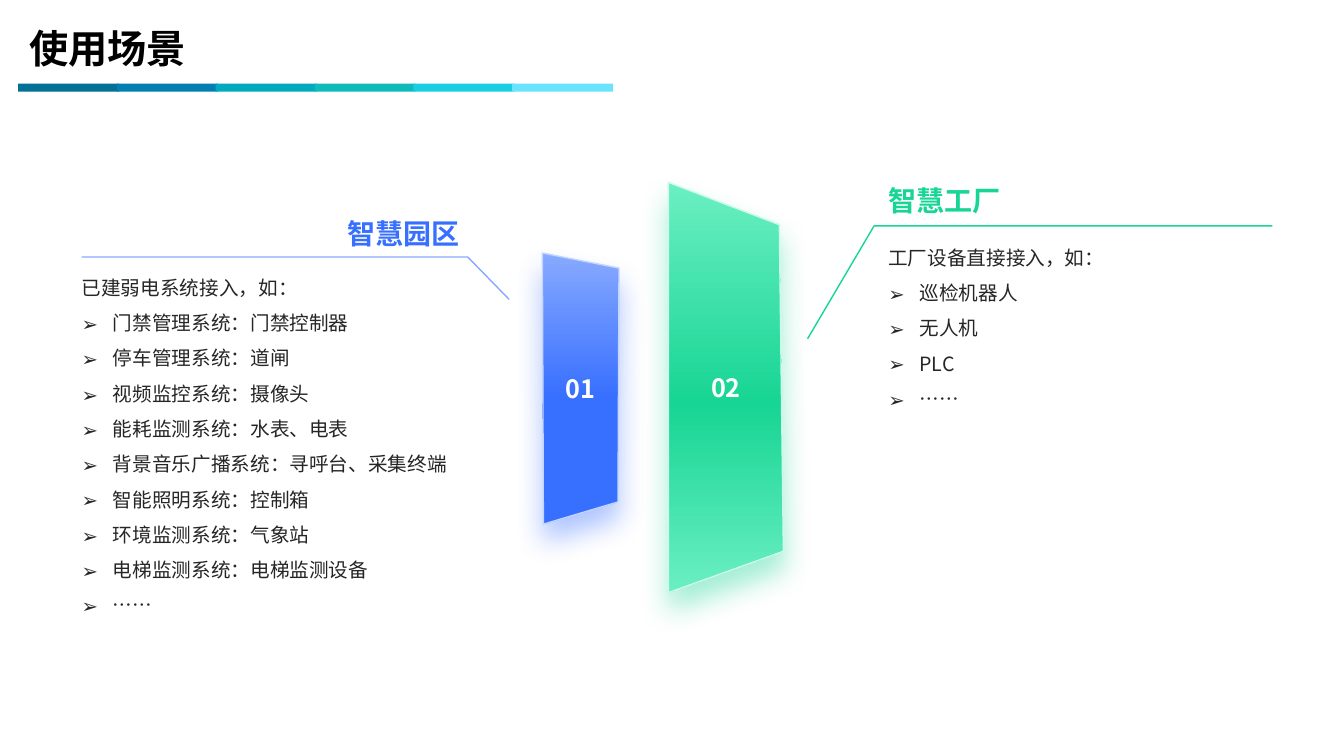
from lxml.etree import SubElement
from pptx import Presentation
from pptx.dml.color import RGBColor
from pptx.enum.shapes import MSO_SHAPE
from pptx.enum.text import MSO_ANCHOR as Anchor, PP_ALIGN as Align
from pptx.oxml.ns import qn
from pptx.util import Inches, Pt

THEME = {
    "font": "Noto Sans CJK SC", "title_font": "Open Sans",
    "title": 28, "heading": 20, "number": 18, "body": 14,
    "black": "000000", "ink": "262626", "white": "FFFFFF",
    "blue": "376FFF", "light_blue": "87A9FF", "pale_blue": "C3D4FF",
    "green": "17D594", "light_green": "6BEFC2", "pale_green": "CEFAEB",
    "bars": ["007094", "017FB3", "00A9BE", "0FBABA", "19CEE0", "6AE3FE"],
}


def grid(*cells):
    """Turn columns and rows of a 0.1 inch grid into lengths."""
    return [Inches(cell / 10) for cell in cells]


def write(shape, lines, size, color, bold=False, align=Align.LEFT, anchor=Anchor.TOP,
          font=THEME["font"], spacing=1.0, inset=0, wrap=True):
    """Fill a shape with text; every line after the first is a bullet."""
    frame = shape.text_frame
    frame_format = {"word_wrap": wrap, "vertical_anchor": anchor}
    frame_format |= {f"margin_{side}": Inches(inset) for side in ("left", "right")}
    frame_format |= {f"margin_{side}": Inches(inset / 2) for side in ("top", "bottom")}
    for name, value in frame_format.items():
        setattr(frame, name, value)
    for index, line in enumerate(lines):
        paragraph = frame.add_paragraph() if index else frame.paragraphs[0]
        paragraph.alignment = align
        paragraph.line_spacing = spacing
        run = paragraph.add_run()
        run.text = line
        for name, value in {"name": font, "size": Pt(size), "bold": bold}.items():
            setattr(run.font, name, value)
        run.font.color.rgb = RGBColor.from_string(color)
        SubElement(run.font._element, qn("a:ea"), typeface=THEME["font"])
        if index:
            properties = paragraph._p.get_or_add_pPr()
            properties.set("marL", str(Inches(0.31)))
            properties.set("indent", str(-Inches(0.31)))
            SubElement(properties, qn("a:buFont"), typeface=THEME["font"])
            SubElement(properties, qn("a:buChar"), char="➢")


presentation = Presentation()
presentation.slide_width, presentation.slide_height = Inches(13.33), Inches(7.5)
slide = presentation.slides.add_slide(presentation.slide_layouts[6])
shapes = slide.shapes

# Title and its six-colour rule
write(shapes.add_textbox(*grid(1.9, 1.9, 55, 5.7)), ["使用场景"], THEME["title"], THEME["black"],
      bold=True, anchor=Anchor.MIDDLE, font=THEME["title_font"], inset=0.1)
for index, color in enumerate(THEME["bars"]):
    bar = shapes.add_shape(MSO_SHAPE.RECTANGLE, *grid(1.8 + 9.8 * index, 8.3, 10, 0.8))
    bar.shadow.inherit = False
    bar.fill.solid()
    bar.fill.fore_color.rgb = RGBColor.from_string(color)
    bar.line.fill.background()

# Numbered panels and the callout lines that lead to them
blue, light_blue = THEME["blue"], THEME["light_blue"]
green, light_green = THEME["green"], THEME["light_green"]
outlines = [
    {"points": [(53.8, 25.1), (61.4, 26.6), (61.3, 49.8), (53.9, 52)], "number": "01",
     "line": THEME["pale_blue"], "glow": blue,
     "stops": [(0, light_blue), (54, blue), (100, blue)]},
    {"points": [(66.3, 18.1), (77.3, 22.3), (77.7, 54.7), (66.3, 58.8)], "number": "02",
     "line": THEME["pale_green"], "glow": green,
     "stops": [(0, light_green), (54, green), (100, light_green)]},
    {"points": [(8.1, 25.5), (46.4, 25.5), (50.5, 29.7)], "line": light_blue},
    {"points": [(80.1, 33.6), (86.7, 22.4), (126.2, 22.4)], "line": green},
]
for outline in outlines:
    is_panel = "number" in outline
    start, *corners = [grid(*point) for point in outline["points"]]
    builder = shapes.build_freeform(*start)
    builder.add_line_segments(corners, close=is_panel)
    shape = builder.convert_to_shape()
    shape.line.color.rgb = RGBColor.from_string(outline["line"])
    shape.line.width = Pt(1)
    shape.shadow.inherit = False
    if not is_panel:
        shape.fill.background()
        continue
    shape.fill.gradient()
    shape.fill.gradient_angle = 270
    properties = shape._element.spPr
    stop_list = properties.find(qn("a:gradFill")).find(qn("a:gsLst"))
    for stop in list(stop_list):
        stop_list.remove(stop)
    for position, color in outline["stops"]:
        stop = SubElement(stop_list, qn("a:gs"), pos=str(position * 1000))
        SubElement(stop, qn("a:srgbClr"), val=color)
    glow = SubElement(properties.find(qn("a:effectLst")), qn("a:outerShdw"),
                      blurRad=str(Pt(20)), dist=str(Pt(12)), dir="5400000",
                      algn="t", rotWithShape="0")
    glow_color = SubElement(glow, qn("a:srgbClr"), val=outline["glow"])
    SubElement(glow_color, qn("a:alpha"), val="40000")
    write(shape, [outline["number"]], THEME["number"], THEME["white"], bold=True,
          align=Align.CENTER, anchor=Anchor.MIDDLE, inset=0.1, wrap=False)

# Scenario headings and lists
scenarios = [
    {"heading": "智慧园区", "heading_box": (11.3, 18.2, 34.3, 6.6), "color": blue,
     "align": Align.RIGHT, "body_box": (8.1, 26.2, 37.5, 25.6),
     "lines": ["已建弱电系统接入，如：", "门禁管理系统：门禁控制器", "停车管理系统：道闸",
               "视频监控系统：摄像头", "能耗监测系统：水表、电表",
               "背景音乐广播系统：寻呼台、采集终端", "智能照明系统：控制箱",
               "环境监测系统：气象站", "电梯监测系统：电梯监测设备", "……"]},
    {"heading": "智慧工厂", "heading_box": (88.1, 15.4, 35.6, 6.1), "color": green,
     "align": Align.LEFT, "body_box": (88.1, 23.2, 37.9, 28.6),
     "lines": ["工厂设备直接接入，如：", "巡检机器人", "无人机", "PLC", "……"]},
]
for scenario in scenarios:
    write(shapes.add_textbox(*grid(*scenario["heading_box"])), [scenario["heading"]],
          THEME["heading"], scenario["color"], bold=True, align=scenario["align"],
          anchor=Anchor.BOTTOM)
    write(shapes.add_textbox(*grid(*scenario["body_box"])), scenario["lines"],
          THEME["body"], THEME["ink"], spacing=1.5)

presentation.save("out.pptx")
